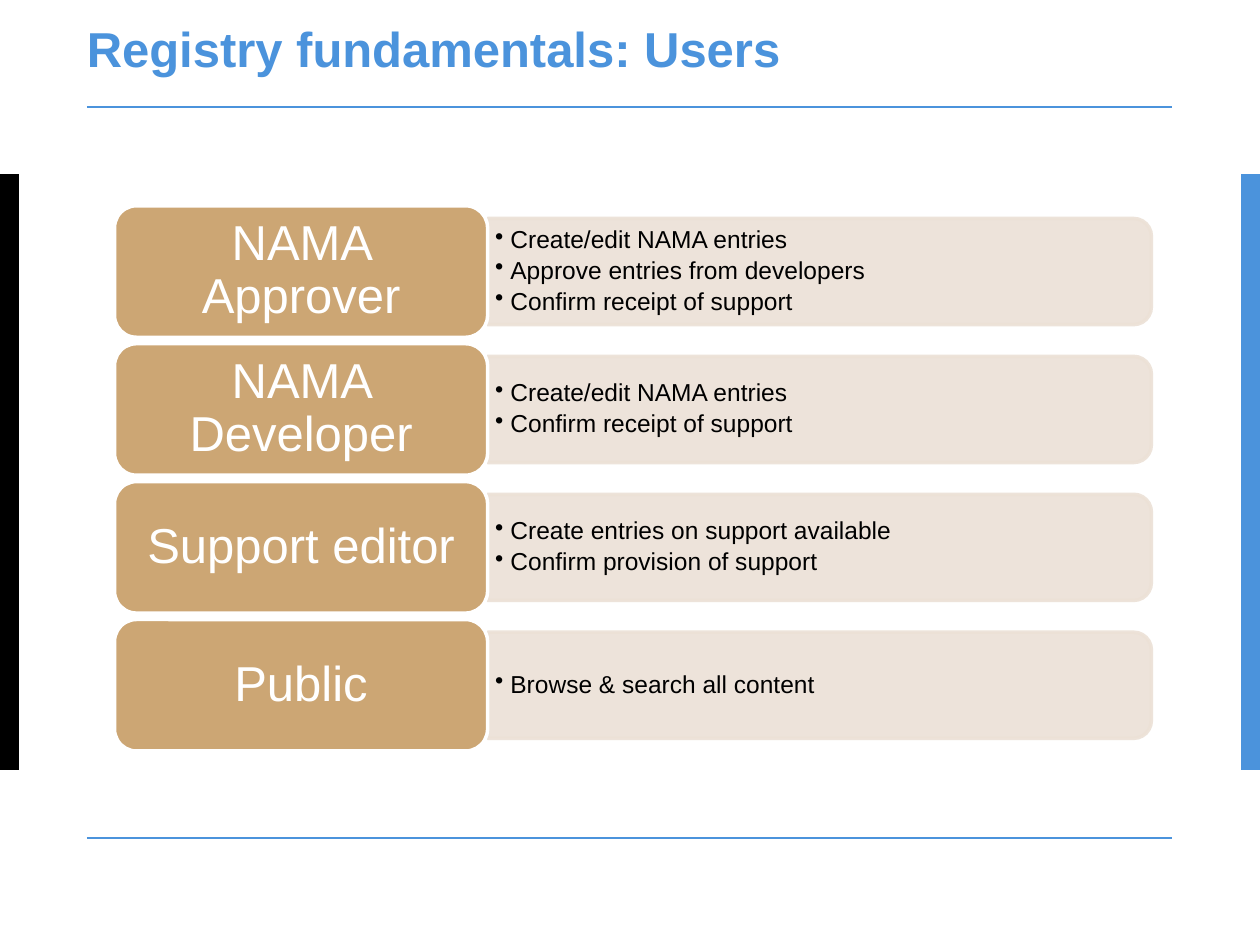
import pptx
import pptx.util
import pptx.dml.color
import pptx.enum.shapes
import pptx.enum.text
import pptx.oxml.ns
from lxml import etree

Cm, Pt = pptx.util.Cm, pptx.util.Pt
Kind = pptx.enum.shapes.MSO_SHAPE
Align = pptx.enum.text.PP_ALIGN
Anchor = pptx.enum.text.MSO_ANCHOR
qn = pptx.oxml.ns.qn

# Content
TITLE = "Registry fundamentals: Users"
USERS = [
    ("NAMA Approver", ["Create/edit NAMA entries",
                       "Approve entries from developers",
                       "Confirm receipt of support"]),
    ("NAMA Developer", ["Create/edit NAMA entries",
                        "Confirm receipt of support"]),
    ("Support editor", ["Create entries on support available",
                        "Confirm provision of support"]),
    ("Public", ["Browse & search all content"]),
]

THEME = {
    "font": "Arial", "blue": "4B93DC", "black": "000000", "white": "FFFFFF",
    "tan": "CCA674", "sand": "ECE1D6", "big": 28, "small": 14,
}

# Layout in centimetres
WIDE, HIGH = 25.4, 19.05
EDGE, SPAN = 1.75, 21.87
RAIL = 0.38
LEFT, TOP, STEP = 2.31, 4.15, 2.78
TAG_W, TAG_H = 7.52, 2.65
BAR_W, BAR_H = 13.38, 2.14
TEXT_W, TEXT_H = 13.28, 1.92


def color(name):
    return pptx.dml.color.RGBColor.from_string(THEME[name])


def box(kind, x, y, w, h, fill, line=None):
    part = slide.shapes.add_shape(kind, Cm(x), Cm(y), Cm(w), Cm(h))
    part.shadow.inherit = False
    part.fill.solid()
    part.fill.fore_color.rgb = color(fill)
    if line:
        part.line.color.rgb = color(line)
        part.line.width = Pt(2)
    else:
        part.line.fill.background()
    return part


def frame(part, side, rise):
    text = part.text_frame
    text.word_wrap = True
    text.auto_size = pptx.enum.text.MSO_AUTO_SIZE.NONE
    text.vertical_anchor = Anchor.MIDDLE
    text.margin_left = text.margin_right = Cm(side)
    text.margin_top = text.margin_bottom = Cm(rise)
    return text


def write(para, words, size, tint, bold=False):
    run = para.add_run()
    run.text = words
    run.font.name = THEME["font"]
    run.font.size = Pt(THEME[size])
    run.font.color.rgb = color(tint)
    run.font.bold = bold


def bullet(para):
    props = para._p.get_or_add_pPr()
    props.set("marL", str(Cm(0.31)))
    props.set("indent", str(-Cm(0.31)))
    etree.SubElement(props, qn("a:buChar")).set("char", "•")


def rule(y):
    line = slide.shapes.add_connector(
        pptx.enum.shapes.MSO_CONNECTOR.STRAIGHT,
        Cm(EDGE), Cm(y), Cm(EDGE + SPAN), Cm(y))
    line.line.color.rgb = color("blue")
    line.line.width = Pt(1)
    etree.SubElement(line._element.spPr, qn("a:effectLst"))


def panel(mid, items):
    # Upright shape turned a quarter, so its round corners face right
    x = LEFT + TAG_W + (BAR_W - BAR_H) / 2
    bar = box(Kind.ROUND_2_SAME_RECTANGLE, x, mid - BAR_W / 2,
              BAR_H, BAR_W, "sand", "sand")
    bar.rotation = 90
    for tint in bar._element.spPr.iter(qn("a:srgbClr")):
        etree.SubElement(tint, qn("a:alpha")).set("val", "90000")

    note = slide.shapes.add_textbox(Cm(LEFT + TAG_W), Cm(mid - TEXT_H / 2),
                                    Cm(TEXT_W), Cm(TEXT_H))
    text = frame(note, 0.15, 0.08)
    for i, item in enumerate(items):
        para = text.add_paragraph() if i else text.paragraphs[0]
        para.level = 1
        para.line_spacing = 0.9
        para.space_after = Pt(2.5)
        bullet(para)
        write(para, item, "small", "black")


def label(y, name):
    tag = box(Kind.ROUNDED_RECTANGLE, LEFT, y, TAG_W, TAG_H, "tan", "white")
    para = frame(tag, 0.3, 0.15).paragraphs[0]
    para.alignment = Align.CENTER
    para.line_spacing = 0.9
    write(para, name, "big", "white")


deck = pptx.Presentation()
deck.slide_width, deck.slide_height = Cm(WIDE), Cm(HIGH)
slide = deck.slides.add_slide(deck.slide_layouts[5])

# Side rails and rules
for x, fill in ((0, "black"), (WIDE - RAIL, "blue")):
    box(Kind.RECTANGLE, x, 3.51, RAIL, 12.01, fill)
for y in (2.16, 16.89):
    rule(y)

# Title
head = slide.shapes.title
head.left, head.top = Cm(EDGE), Cm(0.86)
head.width, head.height = Cm(SPAN), Cm(0.86)
para = frame(head, 0, 0).paragraphs[0]
para.alignment = Align.LEFT
para.line_spacing = Pt(15)
write(para, TITLE, "big", "blue", True)

# One row for each kind of user
for i, (name, items) in enumerate(USERS):
    y = TOP + i * STEP
    panel(y + TAG_H / 2, items)
    label(y, name)

deck.save("out.pptx")
